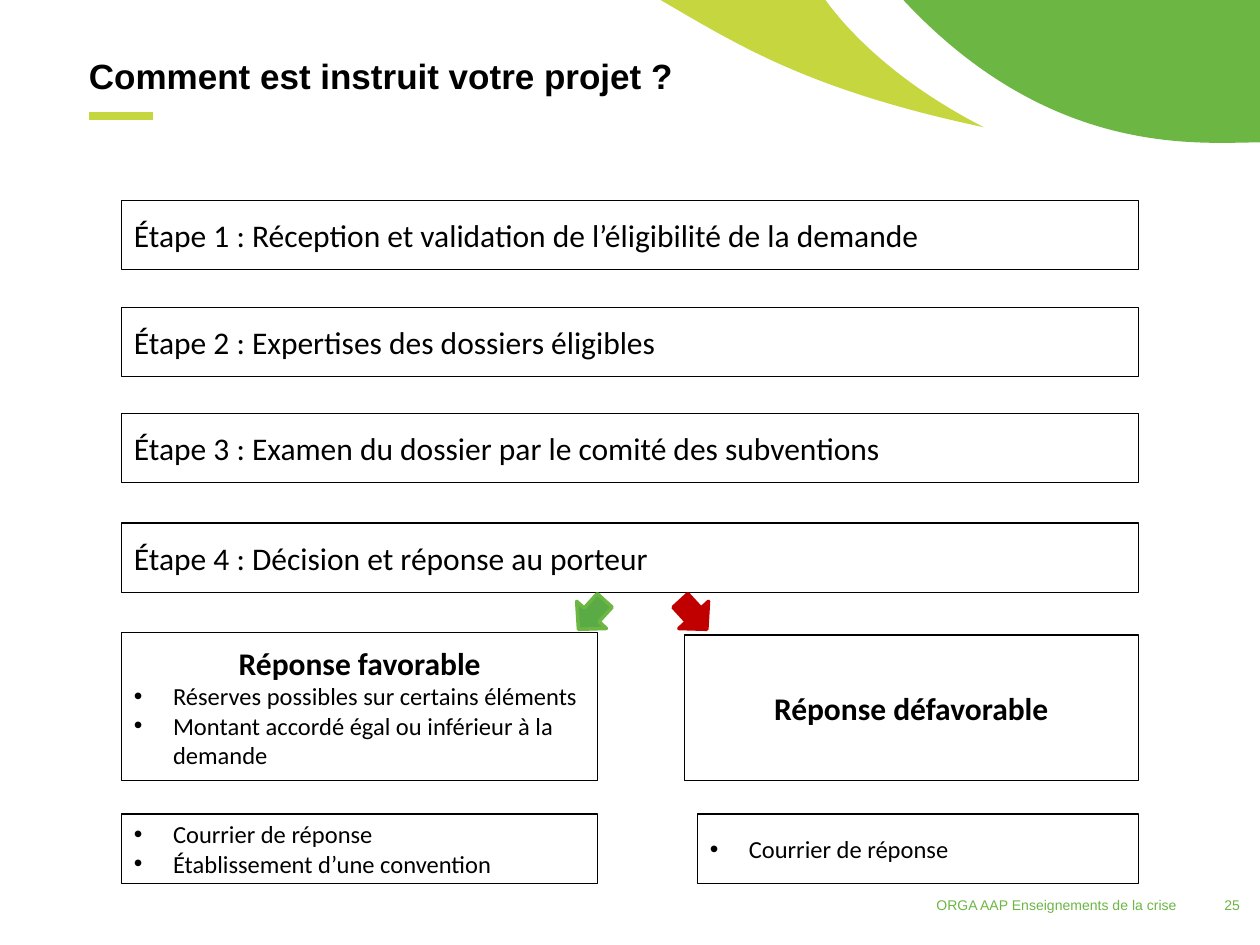
"""Build the slide that explains how a project application is processed."""
import dataclasses

import pptx
import pptx.dml.color
import pptx.enum.shapes
import pptx.enum.text
import pptx.oxml
import pptx.oxml.ns
import pptx.util

ALIGN = pptx.enum.text.PP_ALIGN
ANCHOR = pptx.enum.text.MSO_ANCHOR
SHAPE = pptx.enum.shapes.MSO_SHAPE
WIDTH, HEIGHT = pptx.util.Inches(10), pptx.util.Inches(7.5)
COLUMNS, ROWS = 100, 75
LEFT, RIGHT, BOX_HEIGHT = 9.65, 90.35, 5.5
STEPS = {
    15.9: "Étape 1 : Réception et validation de l’éligibilité de la demande",
    24.4: "Étape 2 : Expertises des dossiers éligibles",
    32.8: "Étape 3 : Examen du dossier par le comité des subventions",
    41.5: "Étape 4 : Décision et réponse au porteur",
}


@dataclasses.dataclass(frozen=True)
class Theme:
    """Colours, fonts and type sizes of the slide."""

    ink: str = "000000"
    green: str = "6CB643"
    lime: str = "C6D63F"
    accepted: str = "5AAB45"
    refused: str = "C00000"
    heading_font: str = "Arial"
    body_font: str = "Calibri"
    title: float = 20
    step: float = 18
    detail: float = 14
    footer: float = 8
    border: float = 0.75
    arrow_border: float = 2
    rule: float = 4.5


THEME = Theme()


def col(count):
    """Convert grid columns to a length."""
    return round(WIDTH * count / COLUMNS)


def row(count):
    """Convert grid rows to a length."""
    return round(HEIGHT * count / ROWS)


def area(left, top, width, height):
    """Convert a grid area to left, top, width and height."""
    return col(left), row(top), col(width), row(height)


def rgb(colour):
    """Convert a hexadecimal colour."""
    return pptx.dml.color.RGBColor.from_string(colour)


def element(tag, **attributes):
    """Create a drawing element."""
    node = pptx.oxml.parse_xml(f"<a:{tag} {pptx.oxml.ns.nsdecls('a')}/>")
    for key, value in attributes.items():
        node.set(key, str(value))
    return node


def apply(target, values):
    """Set every attribute in values on target."""
    for attribute, value in values.items():
        setattr(target, attribute, value)


def write(paragraph, text, size, font=THEME.body_font, colour=THEME.ink,
          bold=False, align=ALIGN.LEFT):
    """Write formatted text into a paragraph."""
    paragraph.alignment = align
    run = paragraph.add_run()
    run.text = text
    apply(run.font, {"name": font, "size": pptx.util.Pt(size), "bold": bold})
    run.font.color.rgb = rgb(colour)


def add_bullet(paragraph):
    """Give a paragraph a hanging bullet."""
    properties = paragraph._p.get_or_add_pPr()
    indent = col(3.1)
    properties.set("marL", str(indent))
    properties.set("indent", str(-indent))
    properties.append(element("buFont", typeface=THEME.heading_font))
    properties.append(element("buChar", char="•"))


def paint(shape, fill=None, border=None, weight=THEME.border):
    """Set the fill and outline of a shape and remove its shadow."""
    shape.shadow.inherit = False
    for part, colour in ((shape.fill, fill), (shape.line.fill, border)):
        if colour:
            part.solid()
            part.fore_color.rgb = rgb(colour)
        else:
            part.background()
    if border:
        shape.line.width = pptx.util.Pt(weight)


def add_box(slide, place, heading=None, bullets=(), **style):
    """Add an outlined box with an optional heading and bullets."""
    box = slide.shapes.add_shape(SHAPE.RECTANGLE, *area(*place))
    paint(box, border=THEME.ink)
    frame = box.text_frame
    apply(frame, {"word_wrap": True, "vertical_anchor": ANCHOR.MIDDLE})
    texts = ([heading] if heading else []) + list(bullets)
    for index, text in enumerate(texts):
        paragraph = frame.add_paragraph() if index else frame.paragraphs[0]
        if text == heading:
            write(paragraph, text, THEME.step, **style)
        else:
            write(paragraph, text, THEME.detail)
            add_bullet(paragraph)


def add_arrow(slide, left, rotation, fill, border):
    """Add an arrow that leads from the decision to an answer."""
    arrow = slide.shapes.add_shape(SHAPE.LEFT_ARROW, *area(left, 47.2, 3.1, 3.2))
    arrow.rotation = rotation
    paint(arrow, fill, border, THEME.arrow_border)


def add_swoosh(slide, start, segments, colour):
    """Add a closed area whose three-point segments are cubic curves."""
    ends = [(col(x), row(y)) for x, y in (start, *(segment[-1] for segment in segments))]
    builder = slide.shapes.build_freeform(*ends[0], scale=1.0)
    builder.add_line_segments(ends[1:], close=True)
    swoosh = builder.convert_to_shape()
    sides = list(swoosh._element.iter(pptx.oxml.ns.qn("a:lnTo")))
    for side, segment in zip(sides, segments):
        if len(segment) == 3:
            curve = element("cubicBezTo")
            for x, y in segment:
                curve.append(element("pt", x=col(x) - swoosh.left, y=row(y) - swoosh.top))
            side.getparent().replace(side, curve)
    paint(swoosh, colour)


def add_rule(slide):
    """Add the short rule under the title."""
    rule = slide.shapes.add_connector(
        pptx.enum.shapes.MSO_CONNECTOR.STRAIGHT, col(7.05), row(9.2), col(12.15), row(9.2))
    rule.line.color.rgb = rgb(THEME.lime)
    rule.line.width = pptx.util.Pt(THEME.rule)
    rule._element.spPr.append(element("effectLst"))


def add_footer(slide, place, text):
    """Add a right-aligned footer text."""
    frame = slide.shapes.add_textbox(*area(*place)).text_frame
    frame.word_wrap = True
    write(frame.paragraphs[0], text, THEME.footer, THEME.heading_font,
          THEME.green, align=ALIGN.RIGHT)


def set_title(slide, text):
    """Place and write the title."""
    title = slide.shapes.title
    apply(title, dict(zip(("left", "top", "width", "height"), area(7.05, 3.85, 86.3, 5.3))))
    apply(title.text_frame, {
        "margin_left": 0, "word_wrap": True, "vertical_anchor": ANCHOR.TOP,
        "auto_size": pptx.enum.text.MSO_AUTO_SIZE.NONE})
    write(title.text_frame.paragraphs[0], text, THEME.title, THEME.heading_font, bold=True)


def main():
    """Build and save the slide."""
    deck = pptx.Presentation()
    apply(deck, {"slide_width": WIDTH, "slide_height": HEIGHT})
    slide = deck.slides.add_slide(deck.slide_layouts[5])
    add_footer(slide, (60.6, 70.7, 33.8, 2.4), "ORGA AAP Enseignements de la crise")
    add_footer(slide, (94.4, 70.7, 5, 2.7), "25")
    add_swoosh(slide, (100, -1.2), (((100, 0.7), (100, 8.1), (100, 11.3)),
                                    ((95.1, 11.3), (82.8, 12.7), (70.7, -1.1))), THEME.green)
    add_swoosh(slide, (50.5, -1.1), (((64.8, -1.1),),
                                     ((64.8, -1.1), (68.1, 5), (78.1, 10.1)),
                                     ((62.6, 6.8), (57.5, 2.8), (50.5, -1.1))), THEME.lime)
    add_rule(slide)
    set_title(slide, "Comment est instruit votre projet ?")
    for top, step in STEPS.items():
        add_box(slide, (LEFT, top, RIGHT - LEFT, BOX_HEIGHT), step)
    answer = {"bold": True, "align": ALIGN.CENTER}
    add_arrow(slide, 45.4, 312.3, THEME.accepted, THEME.green)
    add_box(slide, (LEFT, 50.2, 37.8, 11.75), "Réponse favorable",
            ("Réserves possibles sur certains éléments",
             "Montant accordé égal ou inférieur à la demande"), **answer)
    add_box(slide, (LEFT, 64.6, 37.8, BOX_HEIGHT),
            bullets=("Courrier de réponse", "Établissement d’une convention"))
    add_arrow(slide, 53.5, 227.5, THEME.refused, THEME.refused)
    add_box(slide, (54.3, 50.4, RIGHT - 54.3, 11.55), "Réponse défavorable", **answer)
    add_box(slide, (55.35, 64.6, RIGHT - 55.35, BOX_HEIGHT), bullets=("Courrier de réponse",))
    deck.save("out.pptx")


if __name__ == "__main__":
    main()
